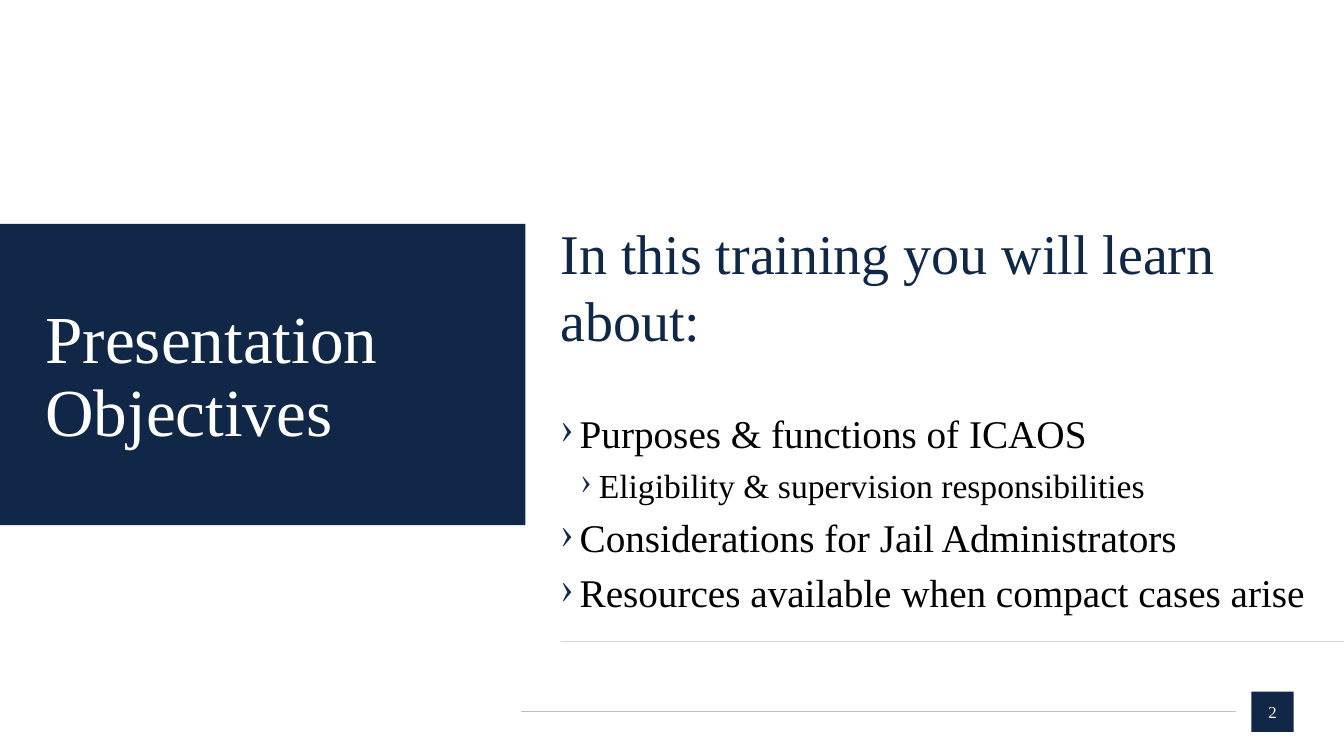
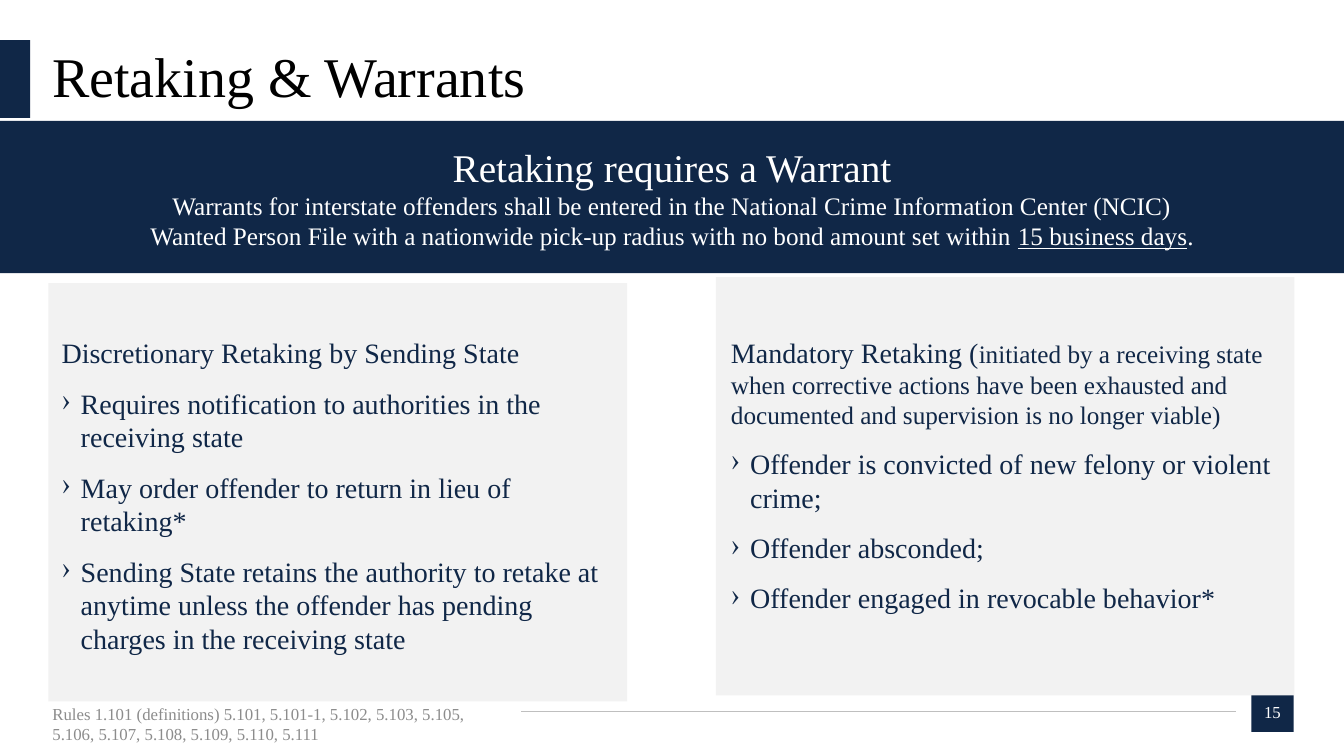
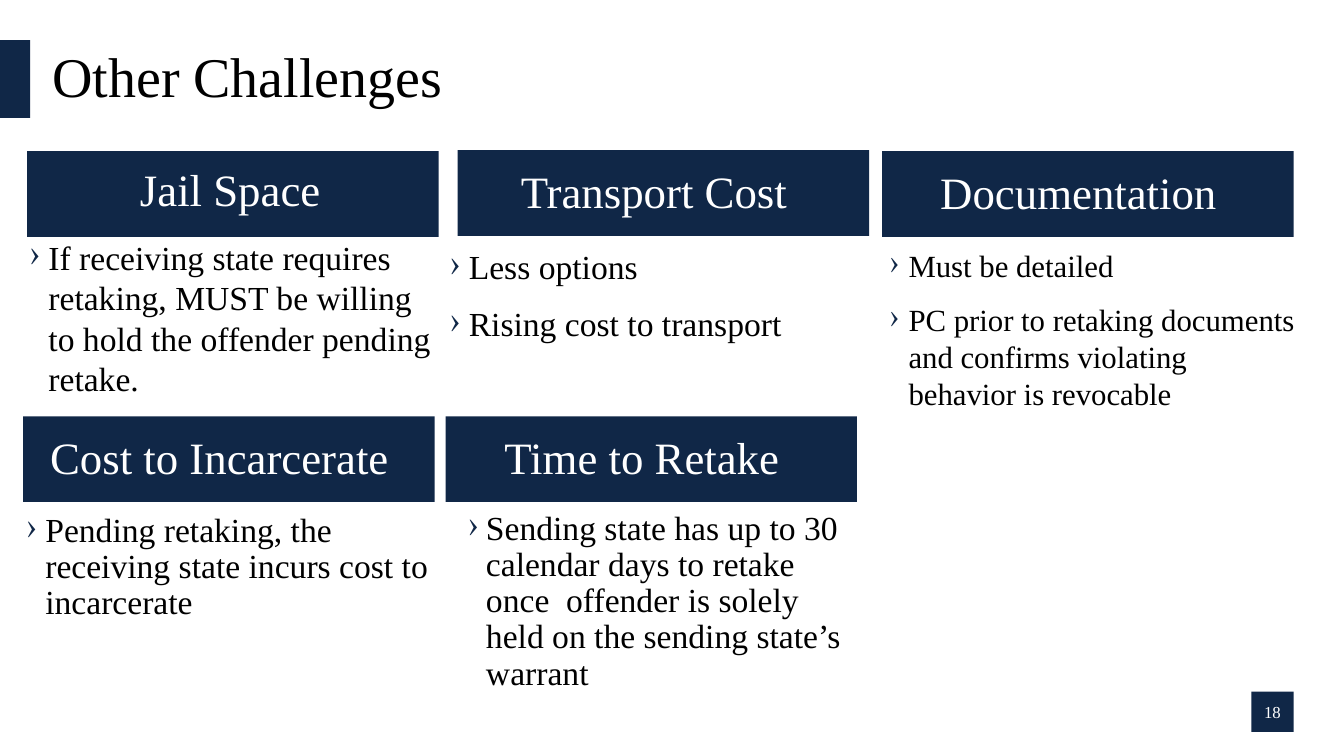
from lxml.etree import SubElement
from pptx import Presentation
from pptx.dml.color import RGBColor
from pptx.enum.shapes import MSO_CONNECTOR, MSO_SHAPE
from pptx.enum.text import MSO_ANCHOR, PP_ALIGN
from pptx.oxml.ns import qn
from pptx.util import Inches, Pt

W, H = Inches(13.33), Inches(7.5)
COL, ROW = W / 100, H / 100  # every position is a share of the slide, in percent
FONT = "Times New Roman"
COLORS = {
    "navy": "102747", "white": "FFFFFF", "black": "000000", "panel": "F2F2F2",
    "footer": "8C8C8C", "rule": "BFBFBF", "divider": "D9D9D9",
}
INDENTS = {1: (0.19, -0.19), 2: (0.38, -0.18)}  # bullet level: margin, first line


def block(s, at, paras=(), fill=None, anchor=MSO_ANCHOR.TOP, inset=(0, 0)):
    """Add a filled rectangle, or a text box if fill is None.

    Each paragraph is (style, run, ...), each run (text, size[, underline]).
    inset holds the right and bottom margins in percent.
    """
    x, y, w, h = at
    box = [int(v) for v in (x * COL, y * ROW, w * COL, h * ROW)]
    if fill:
        sp = s.shapes.add_shape(MSO_SHAPE.RECTANGLE, *box)
        sp.shadow.inherit = False
        sp.fill.solid()
        sp.fill.fore_color.rgb = RGBColor.from_string(COLORS[fill])
        sp.line.fill.background()
    else:
        sp = s.shapes.add_textbox(*box)
    tf = sp.text_frame
    tf.word_wrap = True
    tf.vertical_anchor = anchor
    tf.margin_left = tf.margin_top = 0
    tf.margin_right, tf.margin_bottom = int(inset[0] * COL), int(inset[1] * ROW)
    for i, (style, *runs) in enumerate(paras):
        p = tf.add_paragraph() if i else tf.paragraphs[0]
        p.alignment = style.get("align", PP_ALIGN.LEFT)
        p.line_spacing = style.get("spacing", 1.0)
        p.space_before = Pt(style.get("before", 0))
        p.space_after = Pt(style.get("after", 0))
        if "bullet" in style:
            pPr = p._p.get_or_add_pPr()
            margin, first = INDENTS[style["bullet"]]
            pPr.set("marL", str(Inches(margin)))
            pPr.set("indent", str(Inches(first)))
            color = SubElement(pPr, qn("a:buClr"))
            SubElement(color, qn("a:srgbClr"), val=COLORS["navy"])
            SubElement(pPr, qn("a:buChar"), char="›")
        for text, size, *underline in runs:
            r = p.add_run()
            r.text = text
            r.font.name = FONT
            r.font.size = Pt(size)
            r.font.color.rgb = RGBColor.from_string(COLORS[style["color"]])
            if underline:
                r.font.underline = underline[0]


def rule(s, x1, x2, y, color):
    """Add a thin horizontal line."""
    ln = s.shapes.add_connector(MSO_CONNECTOR.STRAIGHT, int(x1 * COL), int(y * ROW),
                                int(x2 * COL), int(y * ROW))
    ln.line.color.rgb = RGBColor.from_string(COLORS[color])
    ln.line.width = Pt(0.5)
    SubElement(ln._element.spPr, qn("a:effectLst"))


MIDDLE = MSO_ANCHOR.MIDDLE
centred = {"color": "white", "align": PP_ALIGN.CENTER}

prs = Presentation()
prs.slide_width, prs.slide_height = W, H

# Shared furniture: page number, footer rule, title with its tab
slides = []
for number, title, has_rule in [(2, None, True), (15, "Retaking & Warrants", True),
                                (18, "Other Challenges", False)]:
    s = prs.slides.add_slide(prs.slide_layouts[6])
    slides.append(s)
    block(s, (93.1, 91.47, 3.15, 5.33), [(centred, (str(number), 12))], "navy", MIDDLE)
    if has_rule:
        rule(s, 38.78, 91.97, 94.13, "rule")
    if title:
        block(s, (0, 5.33, 2.25, 10.27), fill="navy")
        block(s, (3.9, 5.33, 92.35, 10.27),
              [({"color": "black", "spacing": 0.9}, (title, 40))], anchor=MIDDLE)
objectives, warrants, challenges = slides

# Presentation objectives
s = objectives
block(s, (0, 29.6, 39.1, 39.87), fill="navy")
block(s, (3.38, 40.27, 30.76, 19.47),
      [({"color": "white", "spacing": 0.9}, ("Presentation Objectives", 48))], anchor=MIDDLE)
rule(s, 41.71, 100, 84.8, "divider")
topic = {"color": "black", "bullet": 1, "after": 6}
block(s, (41.71, 28.93, 58.29, 44), [
    ({"color": "navy", "after": 40}, ("In this training you will learn about:", 40)),
    (topic, ("Purposes & functions of ICAOS", 28)),
    (topic | {"bullet": 2}, ("Eligibility & supervision responsibilities", 24)),
    (topic, ("Considerations for Jail Administrators", 28)),
    (topic, ("Resources available when compact cases arise", 28)),
])

# Retaking and warrants
s = warrants
block(s, (3.9, 93.07, 33, 5.33), [
    ({"color": "footer"}, ("Rules 1.101 (definitions) 5.101, 5.101-1, 5.102, 5.103, 5.105, "
                           "5.106, 5.107, 5.108, 5.109, 5.110, 5.111", 12)),
], anchor=MIDDLE)
block(s, (0, 16, 100, 20.13), [
    (centred, ("Retaking requires a Warrant", 28)),
    (centred, ("Warrants for interstate offenders shall be entered in the "
               "National Crime Information Center (NCIC)", 18)),
    (centred, ("Wanted Person File with a nationwide pick-up radius with no bond "
               "amount set within ", 18), ("15 business days", 18, True), (".", 18)),
], "navy", MIDDLE)
retaking = [
    ((3.6, 37.47), (4.58, 41.04), [("Discretionary Retaking by Sending State", 20)], [
        "Requires notification to authorities in the receiving state",
        "May order offender to return in lieu of retaking*",
        "Sending State retains the authority to retake at anytime unless the offender "
        "has pending charges in the receiving state"]),
    ((53.26, 36.67), (54.39, 41.94), [
        ("Mandatory Retaking (", 20),
        ("initiated by a receiving state when corrective actions have been exhausted "
         "and documented and supervision is no longer viable)", 18)], [
        "Offender is convicted of new felony or violent crime;",
        "Offender absconded;",
        "Offender engaged in revocable behavior*"]),
]
lead = {"color": "navy", "after": 12}
for (x, y), (text_x, text_w), heading, items in retaking:
    block(s, (x, y, 43.06, 55.33), fill="panel")
    block(s, (text_x, 44.4, text_w, 44),
          [(lead, *heading)] + [(lead | {"bullet": 1}, (item, 20)) for item in items])

# Other challenges
s = challenges
spaced = {"color": "black", "bullet": 1, "after": 12}
tight = {"color": "black", "bullet": 1, "before": 10, "spacing": 0.9}
cards = [
    ("Jail Space", (2.03, 20), (0.4, 1.5), (2.18, 31.33, 30.46, 21.6), spaced, 24,
     ["If receiving state requires retaking, MUST be willing to hold the offender "
      "pending retake."]),
    ("Transport Cost", (34.06, 19.87), (1.4, 0.7), (33.46, 32.53, 31.88, 13.07), spaced, 24,
     ["Less options", "Rising cost to transport"]),
    ("Documentation", (65.64, 20), (1.4, 0.7), (66.17, 32.67, 30.46, 22), spaced, 22,
     ["Must be detailed",
      "PC prior to retaking documents and confirms violating behavior is revocable"]),
    ("Cost to Incarcerate", (1.73, 55.07), (1.4, 0.7), (1.95, 67.87, 30.46, 14.53), tight, 24,
     ["Pending retaking, the receiving state incurs cost to incarcerate"]),
    ("Time to Retake", (33.16, 55.07), (1.4, 0.7), (33.31, 67.6, 30.46, 25.2),
     tight | {"bullet": 2, "before": 5}, 24,
     ["Sending state has up to 30 calendar days to retake once  offender is solely held "
      "on the sending state’s warrant"]),
]
for label, (x, y), inset, body, style, size, items in cards:
    block(s, (x, y, 30.61, 11.33), [(centred, (label, 32))], "navy", MIDDLE, inset)
    block(s, body, [(style, (item, size)) for item in items])

prs.save("out.pptx")
